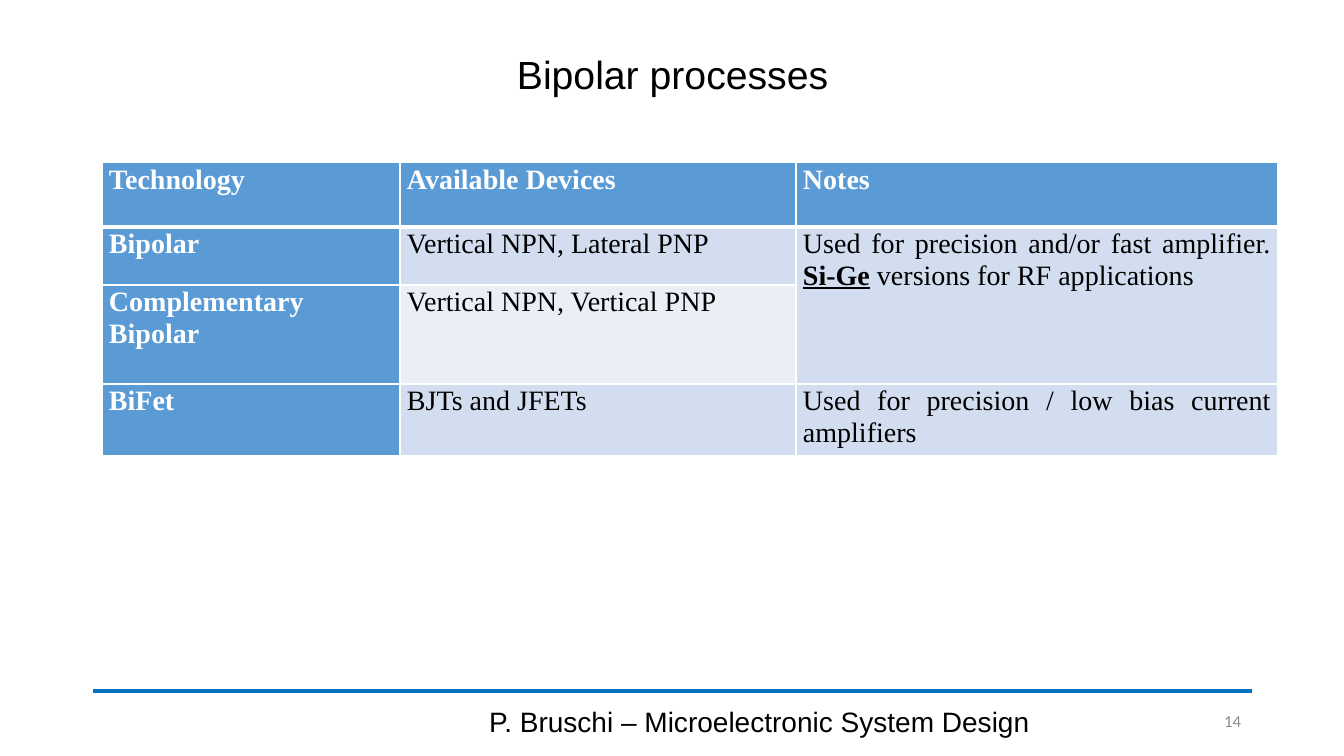
"""Build the slide on bipolar processes with its technology table."""
from dataclasses import dataclass

from lxml.etree import SubElement
from pptx import Presentation
from pptx.dml.color import RGBColor
from pptx.enum.shapes import MSO_CONNECTOR
from pptx.enum.text import MSO_ANCHOR, PP_ALIGN
from pptx.oxml.ns import qn
from pptx.util import Pt

SLIDE_SIZE = (1344, 756)
TEXT_BOXES = [
    ("Bipolar processes", (93, 40, 1159, 73), "title", PP_ALIGN.CENTER, 0.9),
    ("P. Bruschi – Microelectronic System Design", (446, 701, 627, 40), "footer", PP_ALIGN.CENTER, 1.0),
    ("14", (1154, 701, 97, 40), "number", PP_ALIGN.RIGHT, 1.0),
]
RULE = (93, 691, 1252, 691)
TABLE_ORIGIN = (102, 162)
COLUMN_WIDTHS = [298, 396, 482]
ROW_HEIGHTS = [65, 58, 99, 66]
CELL_MARGINS = {"margin_left": 7, "margin_right": 7, "margin_top": 2, "margin_bottom": 2}
AMPLIFIER_NOTE = [
    ("Used for precision and/or fast amplifier. ", "body"),
    ("Si-Ge", "emphasis"),
    (" versions for RF applications", "body"),
]
TABLE_ROWS = [
    ["Technology", "Available Devices", "Notes"],
    ["Bipolar", "Vertical NPN, Lateral PNP", AMPLIFIER_NOTE],
    ["Complementary Bipolar", "Vertical NPN, Vertical PNP", None],
    ["BiFet", "BJTs and JFETs", "Used for precision / low bias current amplifiers"],
]
NOTE_SPAN = ((1, 2), (2, 2))


@dataclass(frozen=True)
class Theme:
    """Colours, fonts and type sizes of the slide."""

    black: str = "000000"
    white: str = "FFFFFF"
    grey: str = "8C8C8C"
    rule: str = "0070C0"
    header: str = "5B9BD5"
    bands: tuple = ("EAEFF7", "D2DEEF")
    rule_width: float = 2.75
    border_width: int = 1
    header_border_width: int = 3

    def font(self, style):
        """Return the font values of a text style."""
        serif = {"name": "Times New Roman", "size": Pt(20)}
        return {
            "title": {"name": "Arial", "size": Pt(28), "color": self.black},
            "footer": {"name": "Arial", "size": Pt(20), "color": self.black},
            "number": {"name": "Calibri", "size": Pt(12), "color": self.grey},
            "header": {**serif, "bold": True, "color": self.white},
            "body": {**serif, "bold": False, "color": self.black},
            "emphasis": {**serif, "bold": True, "underline": True, "color": self.black},
        }[style]


THEME = Theme()


def px(length):
    """Turn pixels into EMU."""
    return round(length * 914400 / 100.8)


def set_values(target, values):
    """Set each named value on the target."""
    for name, value in values.items():
        setattr(target, name, value)


def add_run(paragraph, text, style):
    """Append a run of text in a theme style."""
    run = paragraph.add_run()
    run.text = text
    values = THEME.font(style)
    run.font.color.rgb = RGBColor.from_string(values.pop("color"))
    set_values(run.font, values)


def add_text_box(slide, text, box, style, alignment, line_spacing):
    """Add one line of text centred vertically in its box."""
    frame = slide.shapes.add_textbox(*map(px, box)).text_frame
    set_values(frame, {"word_wrap": True, "vertical_anchor": MSO_ANCHOR.MIDDLE})
    paragraph = frame.paragraphs[0]
    set_values(paragraph, {"alignment": alignment, "line_spacing": line_spacing})
    add_run(paragraph, text, style)


def add_rule(slide):
    """Add the line above the footer."""
    rule = slide.shapes.add_connector(MSO_CONNECTOR.STRAIGHT, *map(px, RULE))
    rule.line.color.rgb = RGBColor.from_string(THEME.rule)
    rule.line.width = Pt(THEME.rule_width)
    SubElement(rule._element.spPr, qn("a:effectLst"))


def add_borders(cell, row):
    """Draw white borders, thicker between the header and the body."""
    thick_side = {0: "lnB", 1: "lnT"}.get(row)
    for side in ("lnL", "lnR", "lnT", "lnB"):
        width = THEME.header_border_width if side == thick_side else THEME.border_width
        line = SubElement(cell._tc.get_or_add_tcPr(), qn(f"a:{side}"), w=str(Pt(width)))
        SubElement(SubElement(line, qn("a:solidFill")), qn("a:srgbClr"), val=THEME.white)


def format_cell(cell, content, row, column):
    """Fill one table cell with its borders, colour and text."""
    is_header = row == 0 or column == 0
    add_borders(cell, row)
    cell.fill.solid()
    cell.fill.fore_color.rgb = RGBColor.from_string(THEME.header if is_header else THEME.bands[row % 2])
    set_values(cell, {name: px(margin) for name, margin in CELL_MARGINS.items()})
    if content is None:
        return
    paragraph = cell.text_frame.paragraphs[0]
    paragraph.alignment = PP_ALIGN.JUSTIFY
    runs = [(content, "header" if is_header else "body")] if isinstance(content, str) else content
    for text, style in runs:
        add_run(paragraph, text, style)


def add_technology_table(slide):
    """Add the table of technologies, devices and notes."""
    size = (sum(COLUMN_WIDTHS), sum(ROW_HEIGHTS))
    table = slide.shapes.add_table(
        len(ROW_HEIGHTS), len(COLUMN_WIDTHS), *map(px, TABLE_ORIGIN + size)
    ).table
    for column, width in zip(table.columns, COLUMN_WIDTHS):
        column.width = px(width)
    for row, height in zip(table.rows, ROW_HEIGHTS):
        row.height = px(height)
    first, last = NOTE_SPAN
    table.cell(*first).merge(table.cell(*last))
    for row, contents in enumerate(TABLE_ROWS):
        for column, content in enumerate(contents):
            format_cell(table.cell(row, column), content, row, column)


def main():
    """Build and save the presentation."""
    presentation = Presentation()
    presentation.slide_width, presentation.slide_height = map(px, SLIDE_SIZE)
    slide = presentation.slides.add_slide(presentation.slide_layouts[6])
    add_rule(slide)
    for text_box in TEXT_BOXES:
        add_text_box(slide, *text_box)
    add_technology_table(slide)
    presentation.save("out.pptx")


if __name__ == "__main__":
    main()
